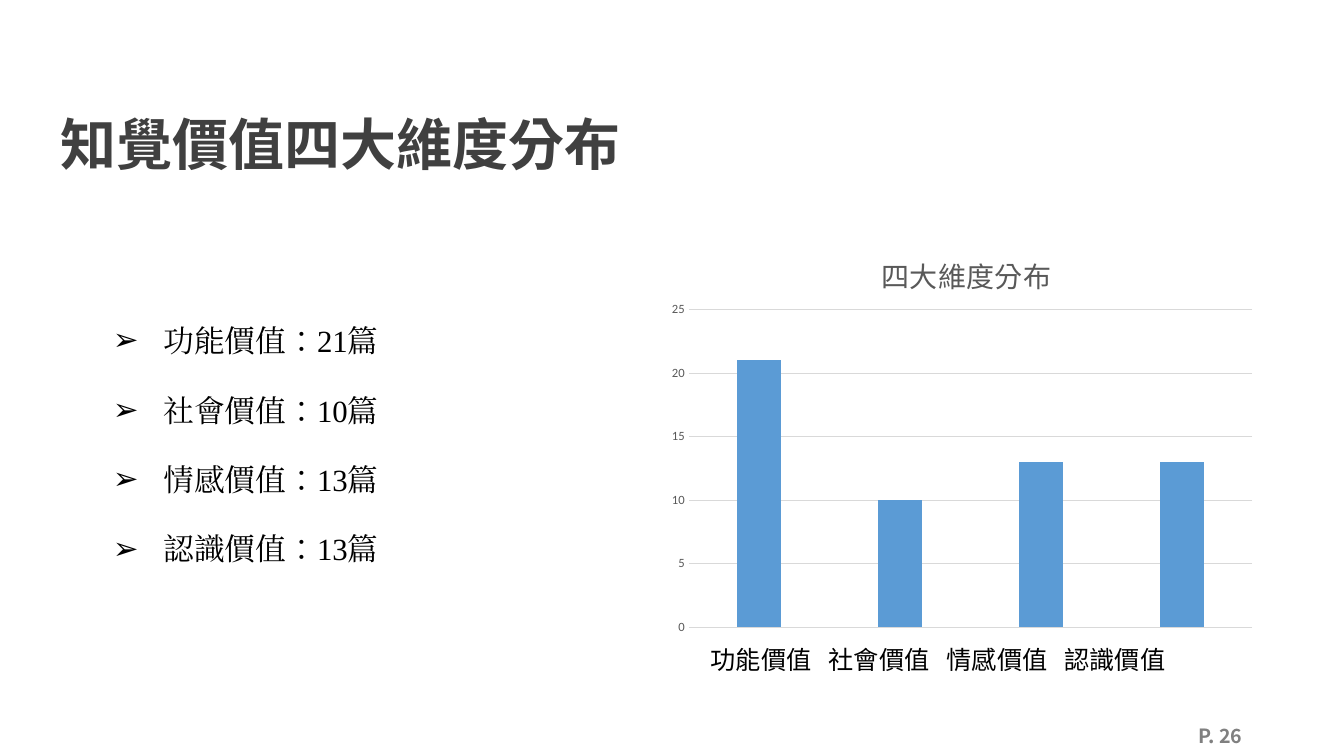
import pptx
import pptx.util
import pptx.chart.data
import pptx.dml.color
import pptx.enum.chart
import pptx.enum.text
import pptx.oxml
import pptx.oxml.ns
from lxml import etree

Inches = pptx.util.Inches
Pt = pptx.util.Pt
qn = pptx.oxml.ns.qn
Align = pptx.enum.text.PP_ALIGN
Anchor = pptx.enum.text.MSO_ANCHOR
Tick = pptx.enum.chart.XL_TICK_MARK
SANS = "Noto Sans CJK SC"


def color(text):
    return pptx.dml.color.RGBColor.from_string(text)


def style(para, size, face, tone, bold=False):
    for run in para.runs:
        run.font.size = Pt(size)
        run.font.name = face
        run.font.bold = bold
        run.font.color.rgb = color(tone)
        props = run.font._element
        props.set("lang", "zh-TW")
        etree.SubElement(props, qn("a:ea")).set("typeface", face)


deck = pptx.Presentation()
deck.slide_width, deck.slide_height = Inches(13.33), Inches(7.5)
slide = deck.slides.add_slide(deck.slide_layouts[1])
shapes = slide.shapes
names = ["功能價值", "社會價值", "情感價值", "認識價值"]
counts = [21, 10, 13, 13]

title = shapes.title
title.left, title.top, title.width, title.height = map(Inches, (0.5, 1.11, 11.5, 0.71))
frame = title.text_frame
frame.text = "知覺價值四大維度分布"
frame.vertical_anchor = Anchor.MIDDLE
frame.auto_size = pptx.enum.text.MSO_AUTO_SIZE.NONE
head = frame.paragraphs[0]
head.alignment = Align.LEFT
head.line_spacing = 0.9
style(head, 40, SANS, "404040", True)

body = slide.placeholders[1]
body.left, body.top, body.width, body.height = map(Inches, (1.02, 2.96, 3.34, 4.3))
frame = body.text_frame
frame.text = "\n".join(f"{name}：{count}篇" for name, count in zip(names, counts))
frame.auto_size = pptx.enum.text.MSO_AUTO_SIZE.NONE
for row, para in enumerate(frame.paragraphs):
    para.line_spacing = 1.5
    para.space_before = Pt(10 if row else 0)
    props = para._p.get_or_add_pPr()
    props.set("marL", str(Inches(0.5)))
    props.set("indent", str(-Inches(0.5)))
    etree.SubElement(props, qn("a:buChar")).set("char", "➢")
    style(para, 22, "Times New Roman", "000000")

data = pptx.chart.data.CategoryChartData()
data.categories = ["1", "2", "3", "4"]
data.add_series("Series 1", counts)
kind = pptx.enum.chart.XL_CHART_TYPE.COLUMN_CLUSTERED
place = map(Inches, (6.53, 2.19, 6.01, 4.2))
chart = shapes.add_chart(kind, *place, data).chart
chart.has_legend = False
chart.font.size = Pt(10)
chart.font.name = "Calibri"
chart.font.color.rgb = color("000000")
chart.has_title = True
label = chart.chart_title.text_frame
label.text = "四大維度分布"
style(label.paragraphs[0], 20, SANS, "595959")

plot = chart.plots[0]
plot.gap_width = 219
plot.overlap = -27
plot.vary_by_categories = False
fill = plot.series[0].format.fill
fill.solid()
fill.fore_color.rgb = color("5B9BD5")

chart.category_axis.visible = False
axis = chart.value_axis
axis.minimum_scale, axis.maximum_scale, axis.major_unit = 0, 25, 5
axis.major_tick_mark = axis.minor_tick_mark = Tick.NONE
axis.format.line.fill.background()
axis.tick_labels.font.size = Pt(9)
axis.tick_labels.font.name = "Calibri"
axis.tick_labels.font.color.rgb = color("595959")
grid = axis.major_gridlines.format.line
grid.width = Pt(0.75)
grid.color.rgb = color("D9D9D9")

space = chart._chartSpace.chart
zones = [(space.find(qn("c:title")), {"xMode": "edge", "yMode": "edge", "x": 0.36, "y": 0.06}),
         (space.plotArea, {"layoutTarget": "inner", "xMode": "edge", "yMode": "edge",
                           "x": 0.05, "y": 0.21, "w": 0.93, "h": 0.75})]
for zone, parts in zones:
    room = zone.find(qn("c:layout"))
    if room is None:
        room = etree.Element(qn("c:layout"))
        text = zone.find(qn("c:tx"))
        zone.insert(0 if text is None else 1, room)
    for old in list(room):
        room.remove(old)
    hand = etree.SubElement(room, qn("c:manualLayout"))
    for tag, value in parts.items():
        etree.SubElement(hand, qn("c:" + tag)).set("val", str(value))

box = shapes.add_textbox(*map(Inches, (6.95, 6.34, 5.59, 0.4)))
box.text_frame.word_wrap = True
para = box.text_frame.paragraphs[0]
para.text = "\t".join(names)
tabs = etree.SubElement(para._p.get_or_add_pPr(), qn("a:tabLst"))
for col in range(1, len(names)):
    tab = etree.SubElement(tabs, qn("a:tab"))
    tab.set("pos", str(Inches(1.17 * col)))
    tab.set("algn", "l")
style(para, 18, SANS, "000000")

box = shapes.add_textbox(*map(Inches, (9.42, 7.1, 3, 0.4)))
box.text_frame.word_wrap = True
box.text_frame.vertical_anchor = Anchor.MIDDLE
para = box.text_frame.paragraphs[0]
para.text = "P. 26"
para.alignment = Align.RIGHT
style(para, 14, "Noto Sans CJK TC", "808080", True)

deck.save("out.pptx")
